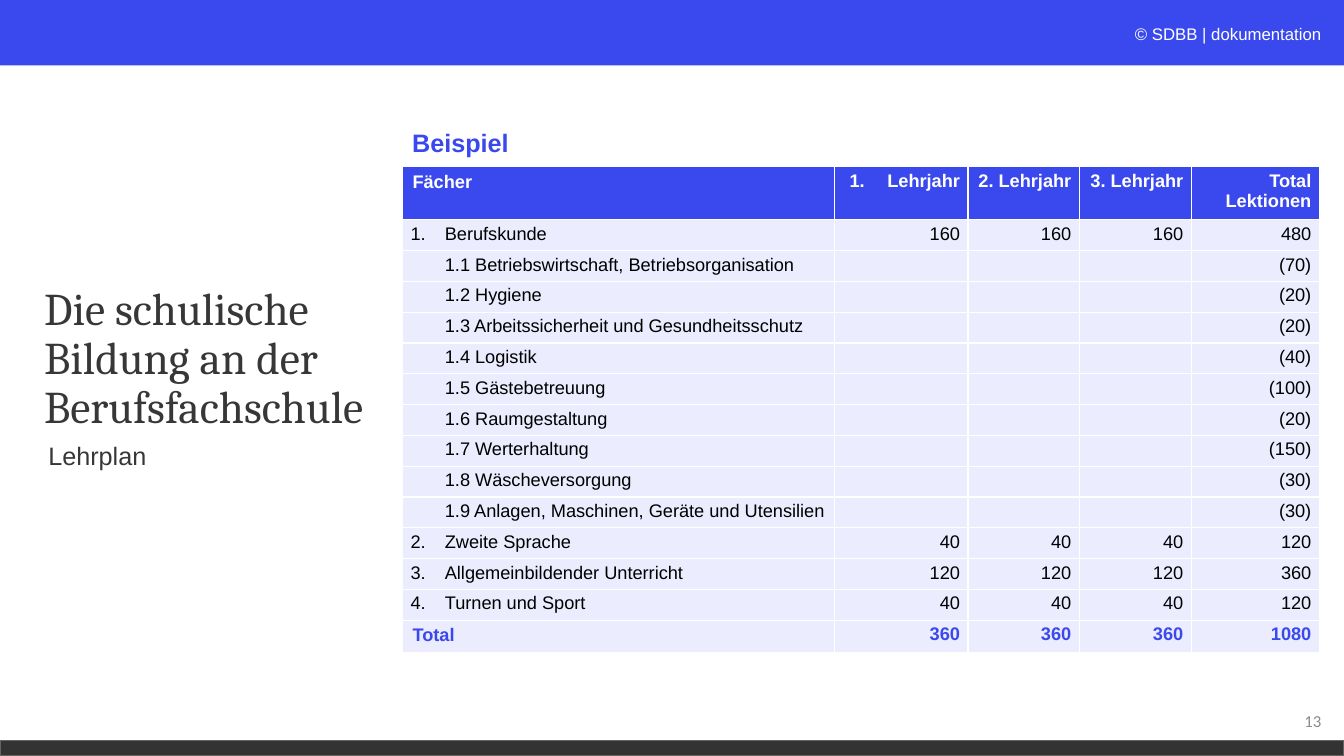
from lxml import etree
from pptx import Presentation
from pptx.dml.color import RGBColor
from pptx.enum import shapes, text
from pptx.oxml import ns
from pptx.util import Pt

BLUE = RGBColor(0x3A, 0x49, 0xEE)
PALE = RGBColor(0xEB, 0xEC, 0xFE)
DARK = RGBColor(0x33, 0x33, 0x33)
EDGE = RGBColor(0x66, 0x63, 0x60)
INK = RGBColor(0x37, 0x37, 0x37)
GREY = RGBColor(0x8C, 0x8C, 0x8C)
BLACK = RGBColor(0, 0, 0)
WHITE = RGBColor(0xFF, 0xFF, 0xFF)

LEFT, RIGHT = text.PP_ALIGN.LEFT, text.PP_ALIGN.RIGHT
TOP, MIDDLE = text.MSO_ANCHOR.TOP, text.MSO_ANCHOR.MIDDLE

COLUMNS = [24.5, 284, 95.5, 79.5, 80, 91.5]
HEADER_HEIGHT, ROW_HEIGHT = 38, 22
HEADER = ["Fächer", "", "Lehrjahr", "2. Lehrjahr", "3. Lehrjahr", "Total Lektionen"]
TOPICS = [
    ("Betriebswirtschaft, Betriebsorganisation", 70),
    ("Hygiene", 20),
    ("Arbeitssicherheit und Gesundheitsschutz", 20),
    ("Logistik", 40),
    ("Gästebetreuung", 100),
    ("Raumgestaltung", 20),
    ("Werterhaltung", 150),
    ("Wäscheversorgung", 30),
    ("Anlagen, Maschinen, Geräte und Utensilien", 30),
]
SUBJECTS = [
    ("Berufskunde", 160, TOPICS),
    ("Zweite Sprache", 40, []),
    ("Allgemeinbildender Unterricht", 120, []),
    ("Turnen und Sport", 40, []),
]


def format_runs(p, font, size, color, bold=False):
    for r in p.runs:
        r.font.name = font
        r.font.size = Pt(size)
        r.font.color.rgb = color
        r.font.bold = bold


def add_bar(s, top, height, fill, line=None):
    sp = s.shapes.add_shape(shapes.MSO_SHAPE.RECTANGLE, 0, Pt(top), Pt(960), Pt(height))
    sp.shadow.inherit = False
    sp.fill.solid()
    sp.fill.fore_color.rgb = fill
    if line is None:
        sp.line.fill.background()
    else:
        sp.line.color.rgb = line
        sp.line.width = Pt(1)


def add_text(s, box, content, font, size, color, bold=False, align=LEFT, anchor=TOP, spacing=1.0):
    tf = s.shapes.add_textbox(*map(Pt, box)).text_frame
    tf.word_wrap = True
    tf.vertical_anchor = anchor
    tf.text = content
    p = tf.paragraphs[0]
    p.alignment = align
    p.line_spacing = spacing
    format_runs(p, font, size, color, bold)


def set_borders(cell, hidden):
    tc_pr = cell._tc.get_or_add_tcPr()
    for side in "LRTB":
        ln = etree.SubElement(tc_pr, ns.qn(f"a:ln{side}"), w=str(Pt(1)))
        if side == hidden:
            etree.SubElement(ln, ns.qn("a:noFill"))
        else:
            fill = etree.SubElement(ln, ns.qn("a:solidFill"))
            etree.SubElement(fill, ns.qn("a:srgbClr"), val=str(WHITE))


def add_number(p, indent):
    p_pr = p._p.get_or_add_pPr()
    p_pr.set("marL", str(Pt(indent)))
    p_pr.set("indent", str(-Pt(indent)))
    etree.SubElement(p_pr, ns.qn("a:buFont"), typeface="+mj-lt")
    etree.SubElement(p_pr, ns.qn("a:buAutoNum"), type="arabicPeriod")


def fill_cell(cell, content, col, fill, color, bold, wide):
    set_borders(cell, {0: "R", 1: "L"}.get(col) if not wide else None)
    cell.fill.solid()
    cell.fill.fore_color.rgb = fill
    cell.margin_left = cell.margin_right = Pt(7.2 if wide else 5.8)
    cell.margin_top = cell.margin_bottom = Pt(3.6 if wide else 2.9)
    p = cell.text_frame.paragraphs[0]
    p.text = content
    p.alignment = LEFT if col < 2 else RIGHT
    format_runs(p, "Arial", 13, color, bold)
    if not content:
        p._p.get_or_add_endParaRPr().set("sz", "1300")


def curriculum_rows():
    rows = [HEADER]
    for number, (subject, lessons, topics) in enumerate(SUBJECTS, 1):
        rows.append([f"{number}.", subject] + [str(lessons)] * 3 + [str(3 * lessons)])
        for sub, (topic, total) in enumerate(topics, 1):
            rows.append(["", f"{number}.{sub} {topic}", "", "", "", f"({total})"])
    yearly = sum(lessons for _, lessons, _ in SUBJECTS)
    rows.append(["Total", ""] + [str(yearly)] * 3 + [str(3 * yearly)])
    return rows


def add_curriculum(s, left, top):
    rows = curriculum_rows()
    height = HEADER_HEIGHT + ROW_HEIGHT * (len(rows) - 1)
    table = s.shapes.add_table(
        len(rows), len(COLUMNS), Pt(left), Pt(top), Pt(sum(COLUMNS)), Pt(height)
    ).table
    table.horz_banding = False
    for column, width in zip(table.columns, COLUMNS):
        column.width = Pt(width)
    last = len(rows) - 1
    for i, row in enumerate(rows):
        table.rows[i].height = Pt(ROW_HEIGHT if i else HEADER_HEIGHT)
        spans = i in (0, last)
        if spans:
            table.cell(i, 0).merge(table.cell(i, 1))
        color = {0: WHITE, last: BLUE}.get(i, BLACK)
        for j, content in enumerate(row):
            fill_cell(table.cell(i, j), content, j, PALE if i else BLUE,
                      color, spans, spans and j < 2)
    add_number(table.cell(0, 2).text_frame.paragraphs[0], 27)


def main():
    prs = Presentation()
    prs.slide_width, prs.slide_height = Pt(960), Pt(540)
    s = prs.slides.add_slide(prs.slide_layouts[6])
    add_bar(s, 0, 46.8, BLUE)
    add_bar(s, 529, 11, DARK, EDGE)
    add_text(s, (620.6, 13.7, 330.5, 21.6), "© SDBB | dokumentation",
             "Arial", 12, WHITE, align=RIGHT)
    add_text(s, (24.5, 204.5, 293.8, 104.4), "Die schulische Bildung an der Berufsfachschule",
             "Cambria", 32.4, INK, anchor=MIDDLE, spacing=0.9)
    add_text(s, (735, 500.4, 216, 28.8), "13", "Calibri", 12, GREY, align=RIGHT, anchor=MIDDLE)
    add_text(s, (27.4, 313.2, 634.3, 38.9), "Lehrplan", "Arial", 18, INK, spacing=0.9)
    add_curriculum(s, 287.5, 119)
    add_text(s, (287.3, 87.1, 254.2, 28.8), "Beispiel", "Arial", 18, BLUE, bold=True)
    prs.save("out.pptx")


if __name__ == "__main__":
    main()
